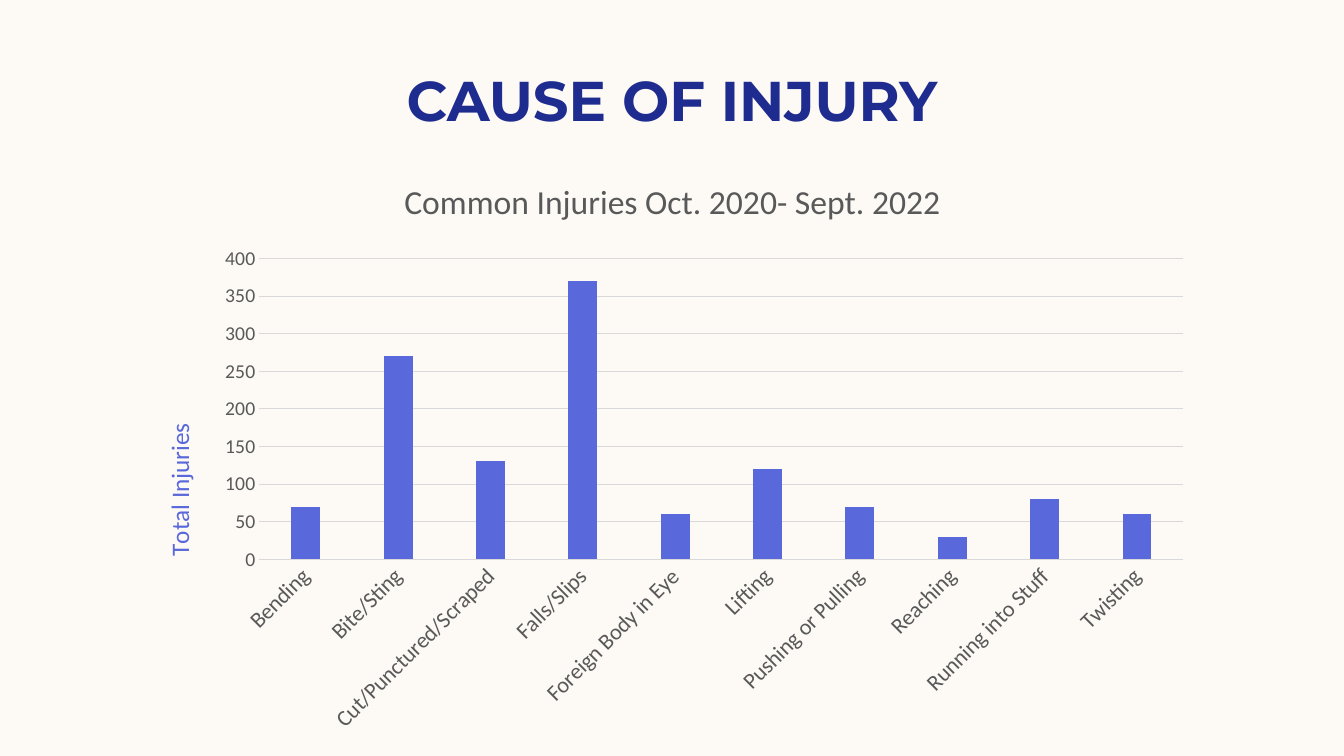
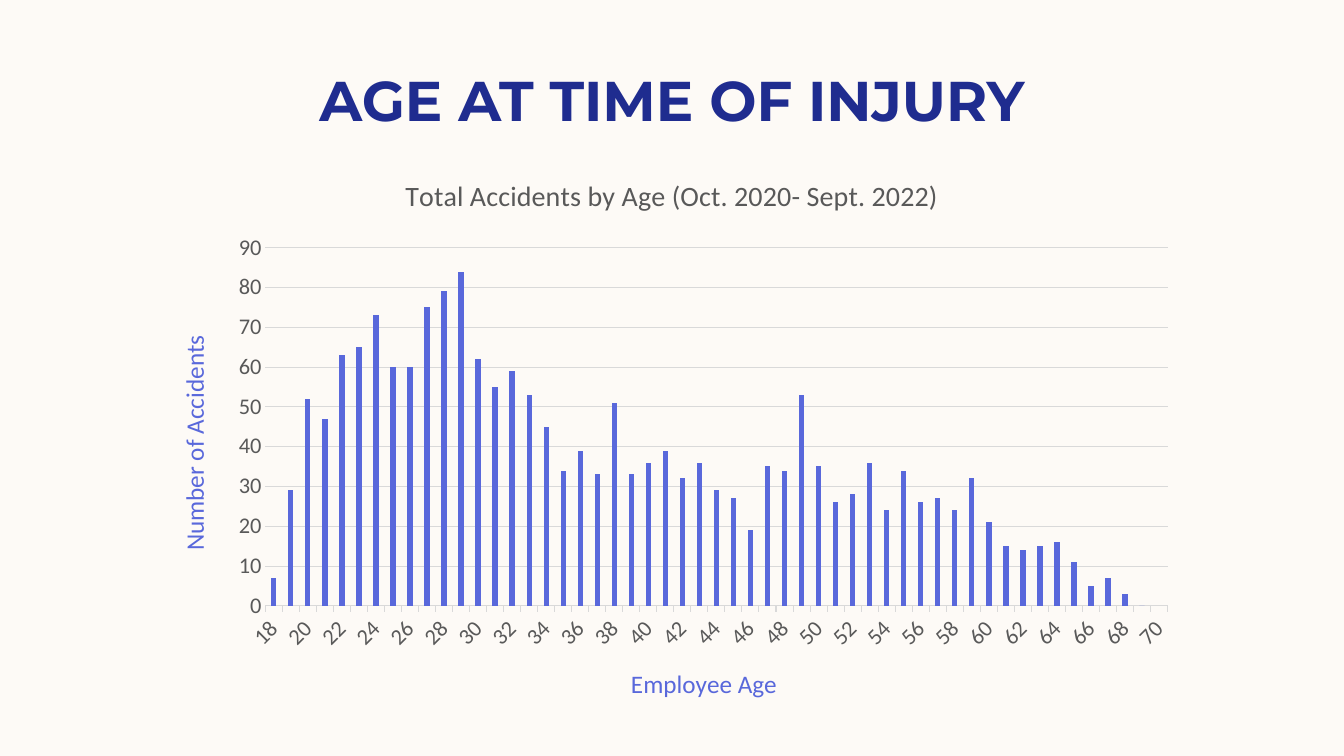
from lxml.etree import SubElement
from pptx import Presentation
from pptx.chart.data import CategoryChartData
from pptx.dml.color import RGBColor
from pptx.enum.chart import XL_CHART_TYPE, XL_TICK_LABEL_POSITION, XL_TICK_MARK
from pptx.enum.text import MSO_ANCHOR, PP_ALIGN
from pptx.oxml import parse_xml
from pptx.oxml.ns import nsdecls, qn
from pptx.util import Inches, Pt

COLS, ROWS = 16, 12
CREAM, NAVY, BLUE, GREY, RULE = "FDFAF6", "1F2C8F", "5968DB", "595959", "D9D9D9"
HEADING, BODY = "Montserrat", "Calibri"
TITLE_ONLY = 5
AUTO_ANGLE = -1000


def rgb(color):
    return RGBColor.from_string(color)


def set_font(font, size, color, name=BODY, bold=False):
    font.name, font.size, font.bold = name, Pt(size), bold
    font.color.rgb = rgb(color)


def set_layout(parent, index, x, y, w=None, h=None):
    """Fix a chart part's place, in percent of the chart; w and h mean the inner plot."""
    for old in parent.findall(qn("c:layout")):
        parent.remove(old)
    layout = parse_xml(f"<c:layout {nsdecls('c')}><c:manualLayout/></c:layout>")
    settings = [("xMode", "edge"), ("yMode", "edge"), ("x", x / 100), ("y", y / 100)]
    if w is not None:
        settings = [("layoutTarget", "inner"), *settings, ("w", w / 100), ("h", h / 100)]
    for tag, value in settings:
        SubElement(layout[0], qn(f"c:{tag}")).set("val", str(value))
    parent.insert(index, layout)


class Deck:
    def __init__(self):
        self.prs = Presentation()
        self.prs.slide_width, self.prs.slide_height = Inches(13.33), Inches(7.5)
        fill = self.prs.slide_master.background.fill
        fill.solid()
        fill.fore_color.rgb = rgb(CREAM)

    def box(self, col, row, cols, rows):
        x, y = self.prs.slide_width / COLS, self.prs.slide_height / ROWS
        return int(col * x), int(row * y), int(cols * x), int(rows * y)

    def slide(self, title):
        self.s = self.prs.slides.add_slide(self.prs.slide_layouts[TITLE_ONLY])
        sp = self.s.shapes.title
        sp.left, sp.top, sp.width, sp.height = self.box(1, 0.96, 14, 2.27)
        tf = sp.text_frame
        tf.word_wrap, tf.vertical_anchor = True, MSO_ANCHOR.TOP
        p = tf.paragraphs[0]
        p.alignment = PP_ALIGN.CENTER
        r = p.add_run()
        r.text = title
        set_font(r.font, 40, NAVY, HEADING, True)

    def heading(self, tf, text, size, color):
        r = tf.paragraphs[0].add_run()
        r.text = text
        set_font(r.font, size, color)

    def column_chart(self, place, title, title_size, categories, values, plot):
        data = CategoryChartData()
        data.categories = categories
        data.add_series("Series 1", values)
        chart = self.s.shapes.add_chart(
            XL_CHART_TYPE.COLUMN_CLUSTERED, *self.box(*place), data).chart
        chart.has_legend = False
        set_font(chart.font, 16, GREY)
        chart.has_title = True
        self.heading(chart.chart_title.text_frame, title, title_size, GREY)
        columns = chart.plots[0]
        columns.gap_width, columns.overlap = 219, -27
        columns.vary_by_categories = False
        fill = columns.series[0].format.fill
        fill.solid()
        fill.fore_color.rgb = rgb(BLUE)
        set_layout(chart.element.xpath("c:chart/c:plotArea")[0], 0, *plot)
        return chart

    def category_axis(self, chart, tick=XL_TICK_MARK.NONE):
        axis = chart.category_axis
        axis.major_tick_mark, axis.minor_tick_mark = tick, XL_TICK_MARK.NONE
        axis.tick_label_position = XL_TICK_LABEL_POSITION.NEXT_TO_AXIS
        axis.format.line.color.rgb = rgb(RULE)
        axis.format.line.width = Pt(0.75)
        set_font(axis.tick_labels.font, 16, GREY)
        self.rotate(chart, "c:catAx/c:txPr", AUTO_ANGLE)

    def value_axis(self, chart, top, step, size):
        axis = chart.value_axis
        axis.minimum_scale, axis.maximum_scale, axis.major_unit = 0, top, step
        axis.major_tick_mark = axis.minor_tick_mark = XL_TICK_MARK.NONE
        axis.format.line.fill.background()
        axis.has_major_gridlines = True
        grid = axis.major_gridlines.format.line
        grid.color.rgb, grid.width = rgb(RULE), Pt(0.75)
        set_font(axis.tick_labels.font, size, GREY)

    def axis_title(self, chart, tag, text, x, y):
        axis = chart.value_axis if tag == "valAx" else chart.category_axis
        axis.has_title = True
        self.heading(axis.axis_title.text_frame, text, 18, BLUE)
        set_layout(chart.element.xpath(f".//c:{tag}/c:title")[0], 1, x, y)
        if tag == "valAx":
            self.rotate(chart, "c:valAx/c:title", -90)

    def rotate(self, chart, part, degrees):
        body = chart.element.xpath(f".//{part}//a:bodyPr")[0]
        body.set("rot", str(degrees * 60000))
        body.set("vert", "horz")


CAUSES = {
    "Bending": 70, "Bite/Sting": 270, "Cut/Punctured/Scraped": 130,
    "Falls/Slips": 370, "Foreign Body in Eye": 60, "Lifting": 120,
    "Pushing or Pulling": 70, "Reaching": 30, "Running into Stuff": 80,
    "Twisting": 60,
}
AGES = [str(age) for age in range(18, 71)]
ACCIDENTS = [
    7, 29, 52, 47, 63, 65, 73, 60, 60, 75, 79, 84, 62, 55, 59, 53, 45, 34,
    39, 33, 51, 33, 36, 39, 32, 36, 29, 27, 19, 35, 34, 53, 35, 26, 28, 36,
    24, 34, 26, 27, 24, 32, 21, 15, 14, 15, 16, 11, 5, 7, 3, 0, None,
]


def main():
    deck = Deck()

    deck.slide("CAUSE OF INJURY")
    chart = deck.column_chart(
        (1.67, 2.48, 12.67, 9.34), "Common Injuries Oct. 2020- Sept. 2022", 24,
        list(CAUSES), list(CAUSES.values()), (11.2, 17.4, 86.8, 51.1))
    deck.category_axis(chart)
    deck.value_axis(chart, 400, 50, 14)
    deck.axis_title(chart, "valAx", "Total Injuries", 1.6, 44.6)

    deck.slide("AGE AT TIME OF INJURY")
    chart = deck.column_chart(
        (1.84, 2.45, 12.32, 9.04), "Total Accidents by Age (Oct. 2020- Sept. 2022)",
        20, AGES, ACCIDENTS, (10.7, 16.4, 87.2, 62.9))
    deck.category_axis(chart, XL_TICK_MARK.OUTSIDE)
    deck.value_axis(chart, 90, 10, 16)
    deck.axis_title(chart, "valAx", "Number of Accidents", 1.7, 31)
    deck.axis_title(chart, "catAx", "Employee Age", 45.6, 89.1)

    deck.prs.save("out.pptx")


if __name__ == "__main__":
    main()
